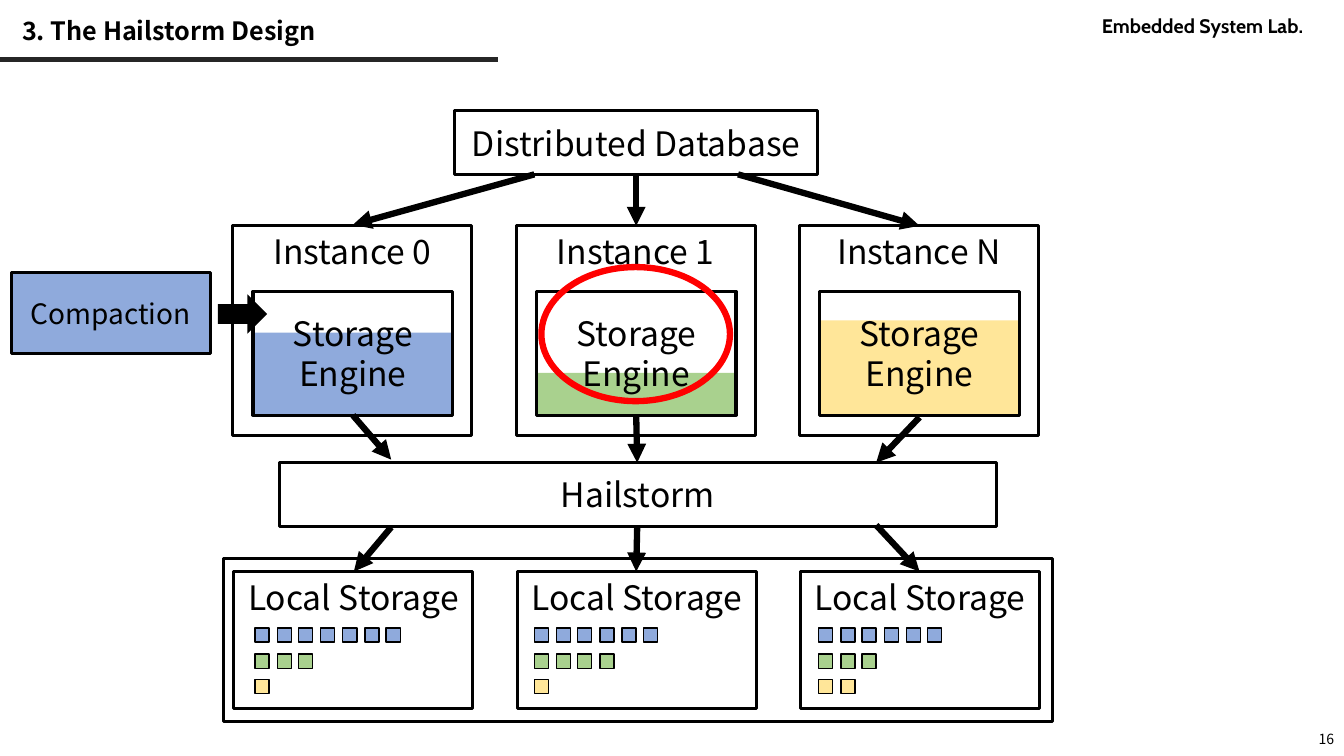
from dataclasses import dataclass
from typing import Optional

from pptx import Presentation
from pptx.dml.color import RGBColor
from pptx.enum.shapes import MSO_CONNECTOR, MSO_SHAPE as SHAPE
from pptx.enum.text import MSO_ANCHOR as ANCHOR, PP_ALIGN as ALIGN
from pptx.oxml.ns import qn
from pptx.util import Emu, Pt
from lxml.etree import SubElement

PX = 9144  # 100 px to the inch
FONT = "Noto Sans CJK KR"
BLACK, WHITE, RED, DARK = "000000", "FFFFFF", "FF0000", "262626"
BLUE, GREEN, YELLOW = "8FAADC", "A9D18E", "FFE699"
COLUMN_PITCH = 281
CHIP_SIZE, CHIP_PITCH, CHIP_ROWS = 14, 21.7, (623, 649, 674)


@dataclass
class Box:
    x: int
    y: int
    w: int
    h: int


@dataclass
class Column:
    instance: str
    color: str
    fill_height: int
    chip_x: int
    chips: tuple[int, int, int]


@dataclass
class Arrow:
    x1: int
    y1: int
    x2: int
    y2: int


COLUMNS = [
    Column("Instance 0", BLUE, 81, 253, (7, 3, 1)),
    Column("Instance 1", GREEN, 41, 530, (6, 4, 1)),
    Column("Instance N", YELLOW, 93, 812, (6, 3, 2)),
]
ARROWS = [
    Arrow(530, 173, 350, 223), Arrow(631, 173, 631, 224), Arrow(732, 173, 912, 224),
    Arrow(350, 412, 388, 456), Arrow(631, 412, 632, 459), Arrow(912, 414, 869, 459),
    Arrow(388, 523, 351, 567), Arrow(632, 523, 631, 567), Arrow(869, 521, 912, 567),
]


def px(n: float) -> Emu:
    return Emu(round(n * PX))


def rgb(color: str) -> RGBColor:
    return RGBColor.from_string(color)


def set_text(sp, text: str, size: int, align: ALIGN, anchor: ANCHOR,
             font: str = FONT, bold: bool = False, wrap: bool = True) -> None:
    tf = sp.text_frame
    tf.word_wrap = wrap
    tf.vertical_anchor = anchor
    tf.text = text
    for p in tf.paragraphs:
        p.alignment = align
        for r in p.runs:
            r.font.name, r.font.size, r.font.bold = font, Pt(size), bold
            r.font.color.rgb = rgb(BLACK)


def add_shape(slide, box: Box, fill: Optional[str] = None, line: Optional[str] = BLACK,
              width: float = 2.25, kind: SHAPE = SHAPE.RECTANGLE):
    sp = slide.shapes.add_shape(kind, px(box.x), px(box.y), px(box.w), px(box.h))
    sp.shadow.inherit = False
    if fill:
        sp.fill.solid()
        sp.fill.fore_color.rgb = rgb(fill)
    else:
        sp.fill.background()
    if line:
        sp.line.color.rgb = rgb(line)
        sp.line.width = Pt(width)
    else:
        sp.line.fill.background()
    return sp


def add_label_box(slide, box: Box, text: str, anchor: ANCHOR = ANCHOR.MIDDLE,
                  fill: Optional[str] = None, size: int = 24) -> None:
    set_text(add_shape(slide, box, fill), text, size, ALIGN.CENTER, anchor)


def add_text(slide, box: Box, text: str, size: int, align: ALIGN = ALIGN.LEFT,
             anchor: ANCHOR = ANCHOR.MIDDLE, font: str = FONT,
             bold: bool = False, wrap: bool = True):
    sp = slide.shapes.add_textbox(px(box.x), px(box.y), px(box.w), px(box.h))
    set_text(sp, text, size, align, anchor, font, bold, wrap)
    return sp


def add_line(slide, a: Arrow, color: str, width: float, head: bool) -> None:
    cx = slide.shapes.add_connector(
        MSO_CONNECTOR.STRAIGHT, px(a.x1), px(a.y1), px(a.x2), px(a.y2))
    cx.line.color.rgb = rgb(color)
    cx.line.width = Pt(width)
    if head:
        SubElement(cx.line._get_or_add_ln(), qn("a:tailEnd"), type="triangle")
    SubElement(cx._element.spPr, qn("a:effectLst"))


def add_header(slide) -> None:
    add_line(slide, Arrow(0, 59, 494, 59), DARK, 3, head=False)
    add_text(slide, Box(1083, 9, 249, 34), "Embedded System Lab.", 14,
             anchor=ANCHOR.TOP, font="Cabin", bold=True, wrap=False)
    title = add_text(slide, Box(12, 12, 971, 40), "3. The Hailstorm Design", 18, bold=True)
    title.text_frame.paragraphs[0].line_spacing = 0.9
    add_text(slide, Box(1033, 717, 300, 32), "16", 10, ALIGN.RIGHT)


def add_column(slide, column: Column, dx: int) -> None:
    """Draw one instance with its storage engine, and the local storage below it."""
    level = column.fill_height
    add_shape(slide, Box(250 + dx, 411 - level, 198, level), column.color, line=None)
    add_label_box(slide, Box(231 + dx, 224, 237, 208), column.instance, ANCHOR.TOP)
    add_label_box(slide, Box(251 + dx, 289, 198, 123), "Storage\nEngine")
    add_label_box(slide, Box(232 + dx, 567, 237, 136), "Local Storage", ANCHOR.TOP)
    for y, color, count in zip(CHIP_ROWS, (BLUE, GREEN, YELLOW), column.chips):
        for i in range(count):
            x = round(column.chip_x + i * CHIP_PITCH)
            add_shape(slide, Box(x, y, CHIP_SIZE, CHIP_SIZE), color, width=1)


def main() -> None:
    prs = Presentation()
    prs.slide_width, prs.slide_height = px(1333), px(750)
    slide = prs.slides.add_slide(prs.slide_layouts[6])

    add_header(slide)
    add_label_box(slide, Box(451, 110, 360, 63), "Distributed Database")
    for i, column in enumerate(COLUMNS):
        add_column(slide, column, i * COLUMN_PITCH)
    add_label_box(slide, Box(277, 459, 711, 63), "Hailstorm", fill=WHITE)
    for arrow in ARROWS:
        add_line(slide, arrow, BLACK, 4.5, head=True)

    add_label_box(slide, Box(11, 270, 198, 81), "Compaction", fill=BLUE, size=20)
    add_shape(slide, Box(216, 292, 49, 39), BLACK, line=None, kind=SHAPE.RIGHT_ARROW)
    add_shape(slide, Box(222, 554, 822, 162))
    add_shape(slide, Box(537, 265, 187, 133), line=RED, width=4.5, kind=SHAPE.OVAL)

    prs.save("out.pptx")


if __name__ == "__main__":
    main()
